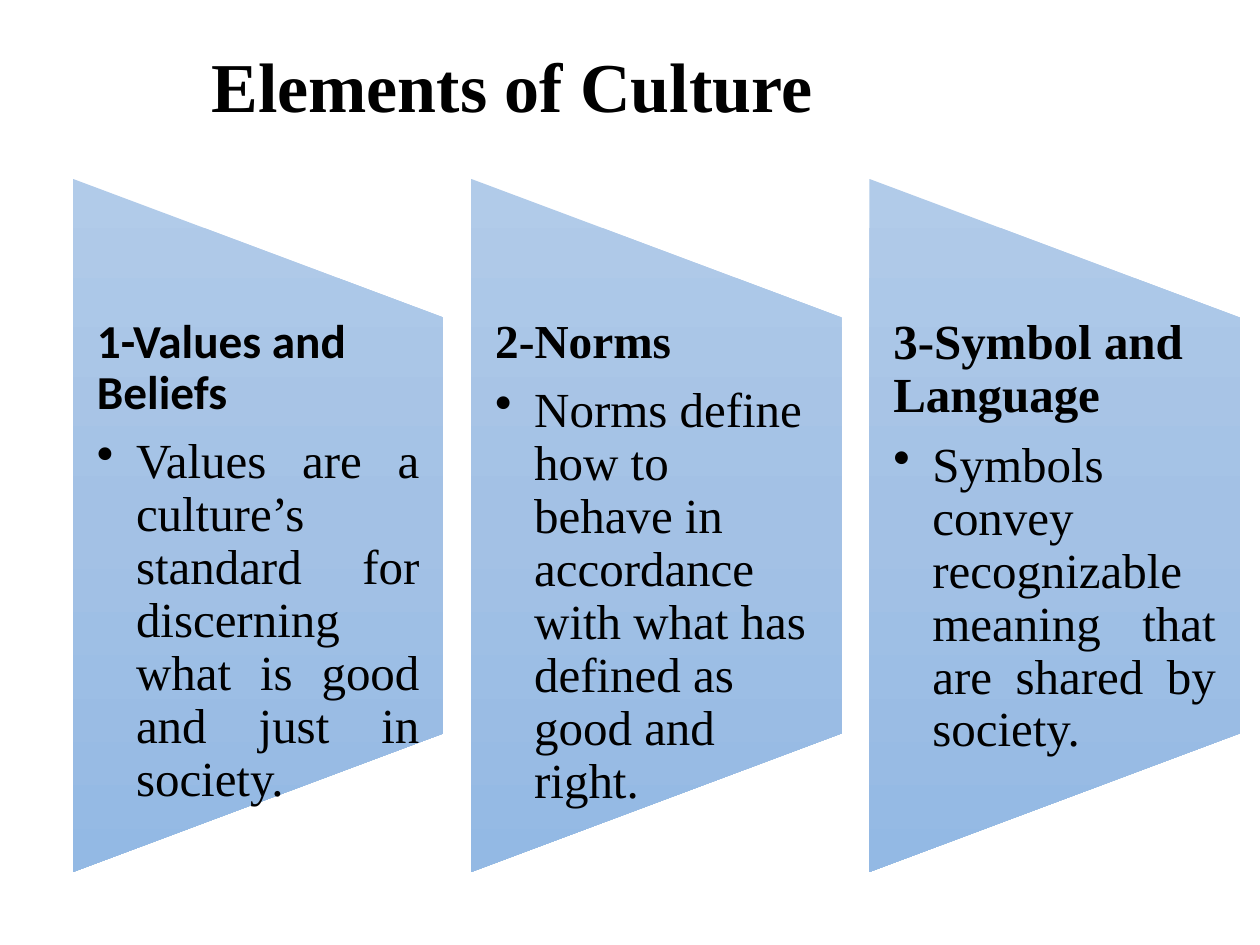
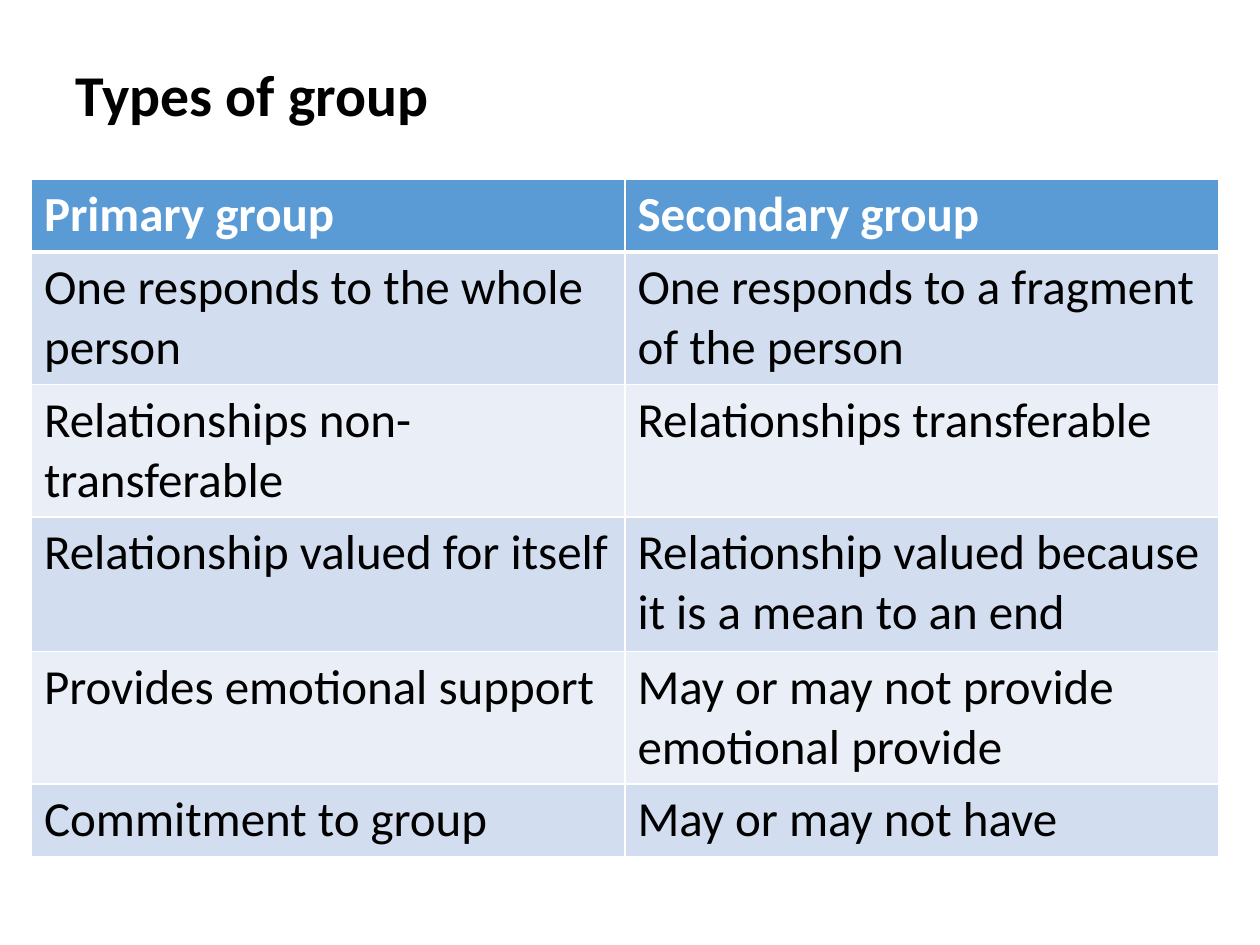
from copy import deepcopy
from dataclasses import dataclass

from lxml import etree
from pptx import Presentation
from pptx.dml.color import RGBColor
from pptx.enum.shapes import MSO_SHAPE
from pptx.enum.text import MSO_ANCHOR, MSO_AUTO_SIZE, PP_ALIGN
from pptx.oxml.ns import qn
from pptx.util import Inches, Pt

TRAPEZOID = MSO_SHAPE.FLOWCHART_MANUAL_OPERATION
MIDDLE, TOP = MSO_ANCHOR.MIDDLE, MSO_ANCHOR.TOP
LEFT, JUSTIFY = PP_ALIGN.LEFT, PP_ALIGN.JUSTIFY
NO_AUTOFIT = MSO_AUTO_SIZE.NONE

# The slide is a grid of square cells.
COLUMNS, ROWS = 100, 75
TITLE_ONLY = 5


@dataclass(frozen=True)
class Theme:
    sans: str = "Calibri"
    serif: str = "Times New Roman"
    text: str = "000000"
    white: str = "FFFFFF"
    header: str = "5B9BD5"
    bands: tuple = ("D2DEEF", "EAEFF7")
    gradient: tuple = ((0, "B1CBE9"), (0.5, "A3C1E5"), (1, "93B9E4"))
    body_size: float = 28
    heading_size: float = 27
    line_spacing: float = 0.9
    border: float = 1
    header_border: float = 3


def set_values(target, values):
    for name, value in values.items():
        setattr(target, name, value)


class Deck:
    def __init__(self, theme):
        self.theme = theme
        self.presentation = Presentation()
        set_values(self.presentation, {"slide_width": Inches(10), "slide_height": Inches(7.5)})
        self.slide = None

    def box(self, left, top, width, height):
        """Turn grid columns and rows into slide lengths."""
        column = self.presentation.slide_width / COLUMNS
        row = self.presentation.slide_height / ROWS
        return [round(length) for length in (left * column, top * row, width * column, height * row)]

    def add_text(self, paragraph, text, size, font, bold=False, color=None):
        run = paragraph.add_run()
        run.text = text
        set_values(run.font, {"size": Pt(size), "name": font, "bold": bold})
        run.font.color.rgb = RGBColor.from_string(color or self.theme.text)

    def add_slide(self, title, place, size, font):
        layout = self.presentation.slide_layouts[TITLE_ONLY]
        self.slide = self.presentation.slides.add_slide(layout)
        shape = self.slide.shapes.title
        set_values(shape, dict(zip(("left", "top", "width", "height"), self.box(*place))))
        set_values(shape.text_frame, {
            "word_wrap": True, "auto_size": NO_AUTOFIT, "vertical_anchor": MIDDLE})
        paragraph = shape.text_frame.paragraphs[0]
        set_values(paragraph, {"alignment": LEFT, "line_spacing": self.theme.line_spacing})
        self.add_text(paragraph, title, size, font, bold=True)

    def trapezoid(self, left, top, width, height):
        """Draw a trapezoid whose long side stands on the left."""
        middle_x, middle_y = left + width / 2, top + height / 2
        shape = self.slide.shapes.add_shape(TRAPEZOID, *self.box(
            middle_x - height / 2, middle_y - width / 2, height, width))
        shape.rotation = 270
        shape.shadow.inherit = False
        shape.line.fill.background()
        shape.fill.gradient()
        shape.fill.gradient_angle = 270
        gradient = shape._element.spPr.find(qn("a:gradFill"))
        gradient.set("rotWithShape", "0")
        stops = gradient.find(qn("a:gsLst"))
        stops.insert(1, deepcopy(stops[0]))
        for stop, (position, color) in zip(shape.fill.gradient_stops, self.theme.gradient):
            stop.position = position
            stop.color.rgb = RGBColor.from_string(color)

    def card_text(self, place, heading, heading_font, heading_size, body, alignment):
        theme = self.theme
        frame = self.slide.shapes.add_textbox(*self.box(*place)).text_frame
        set_values(frame, {
            "word_wrap": True, "auto_size": NO_AUTOFIT, "vertical_anchor": TOP,
            "margin_left": Inches(0.19), "margin_right": Inches(0.19),
            "margin_top": 0, "margin_bottom": 0})
        title = frame.paragraphs[0]
        set_values(title, {"line_spacing": theme.line_spacing, "space_after": Pt(9.5)})
        self.add_text(title, heading, heading_size, heading_font, bold=True)

        item = frame.add_paragraph()
        properties = item._p.get_or_add_pPr()
        properties.set("marL", str(Inches(0.31)))
        properties.set("indent", str(-Inches(0.31)))
        etree.SubElement(properties, qn("a:buChar")).set("char", "•")
        set_values(item, {"level": 1, "alignment": alignment, "line_spacing": theme.line_spacing})
        self.add_text(item, body, theme.body_size, theme.serif)

    def cell_borders(self, cell, top_width, bottom_width):
        theme = self.theme
        properties = cell._tc.get_or_add_tcPr()
        widths = {"lnL": theme.border, "lnR": theme.border, "lnT": top_width, "lnB": bottom_width}
        for side, width in widths.items():
            line = etree.SubElement(properties, qn(f"a:{side}"), w=str(Pt(width)))
            fill = etree.SubElement(line, qn("a:solidFill"))
            etree.SubElement(fill, qn("a:srgbClr"), val=theme.white)

    def table(self, place, rows, row_heights):
        theme = self.theme
        table = self.slide.shapes.add_table(len(rows), len(rows[0]), *self.box(*place)).table
        for row, height in zip(table.rows, row_heights):
            row.height = self.box(0, 0, 0, height)[3]
        for row_number, texts in enumerate(rows):
            is_header = row_number == 0
            fill = theme.header if is_header else theme.bands[(row_number - 1) % 2]
            color = theme.white if is_header else theme.text
            # The line under the header is also the top line of the next row.
            top_width = theme.header_border if row_number == 1 else theme.border
            bottom_width = theme.header_border if is_header else theme.border
            for column_number, text in enumerate(texts):
                cell = table.cell(row_number, column_number)
                self.cell_borders(cell, top_width, bottom_width)
                cell.fill.solid()
                cell.fill.fore_color.rgb = RGBColor.from_string(fill)
                self.add_text(cell.text_frame.paragraphs[0], text, theme.body_size,
                              theme.sans, is_header, color)


def add_culture_slide(deck):
    theme = deck.theme
    deck.add_slide("Elements of Culture", (15.8, 2.5, 77.5, 9.2), 40, theme.serif)
    left, top, width, height, pitch = 5.8, 14.2, 29.4, 55, 31.6
    elements = [
        ("1-Values and Beliefs", theme.sans, theme.heading_size,
         "Values are a culture’s standard for discerning what is good and just in society.",
         JUSTIFY),
        ("2-Norms", theme.serif, theme.heading_size,
         "Norms define how to behave in accordance with what has defined as good and right.",
         LEFT),
        ("3-Symbol and Language", theme.serif, theme.body_size,
         "Symbols convey recognizable meaning that are shared by society.", JUSTIFY),
    ]
    for number, element in enumerate(elements):
        card_left = left + number * pitch
        deck.trapezoid(card_left, top, width, height)
        deck.card_text((card_left, top + height * 0.2, width, height * 0.6), *element)


def add_group_slide(deck):
    deck.add_slide("Types of group", (5, 3, 90, 9.5), 33, deck.theme.sans)
    rows = [
        ("Primary group", "Secondary group"),
        ("One responds to the whole person", "One responds to a fragment of the person"),
        ("Relationships non-transferable", "Relationships transferable"),
        ("Relationship valued for itself", "Relationship valued because it is a mean to an end"),
        ("Provides emotional support", "May or may not provide emotional provide"),
        ("Commitment to group", "May or may not have"),
    ]
    deck.table((2.5, 14.2, 94.2, 53.8), rows, (5.8, 10.5, 10.5, 10.7, 10.5, 5.8))


def main():
    deck = Deck(Theme())
    add_culture_slide(deck)
    add_group_slide(deck)
    deck.presentation.save("out.pptx")


if __name__ == "__main__":
    main()
